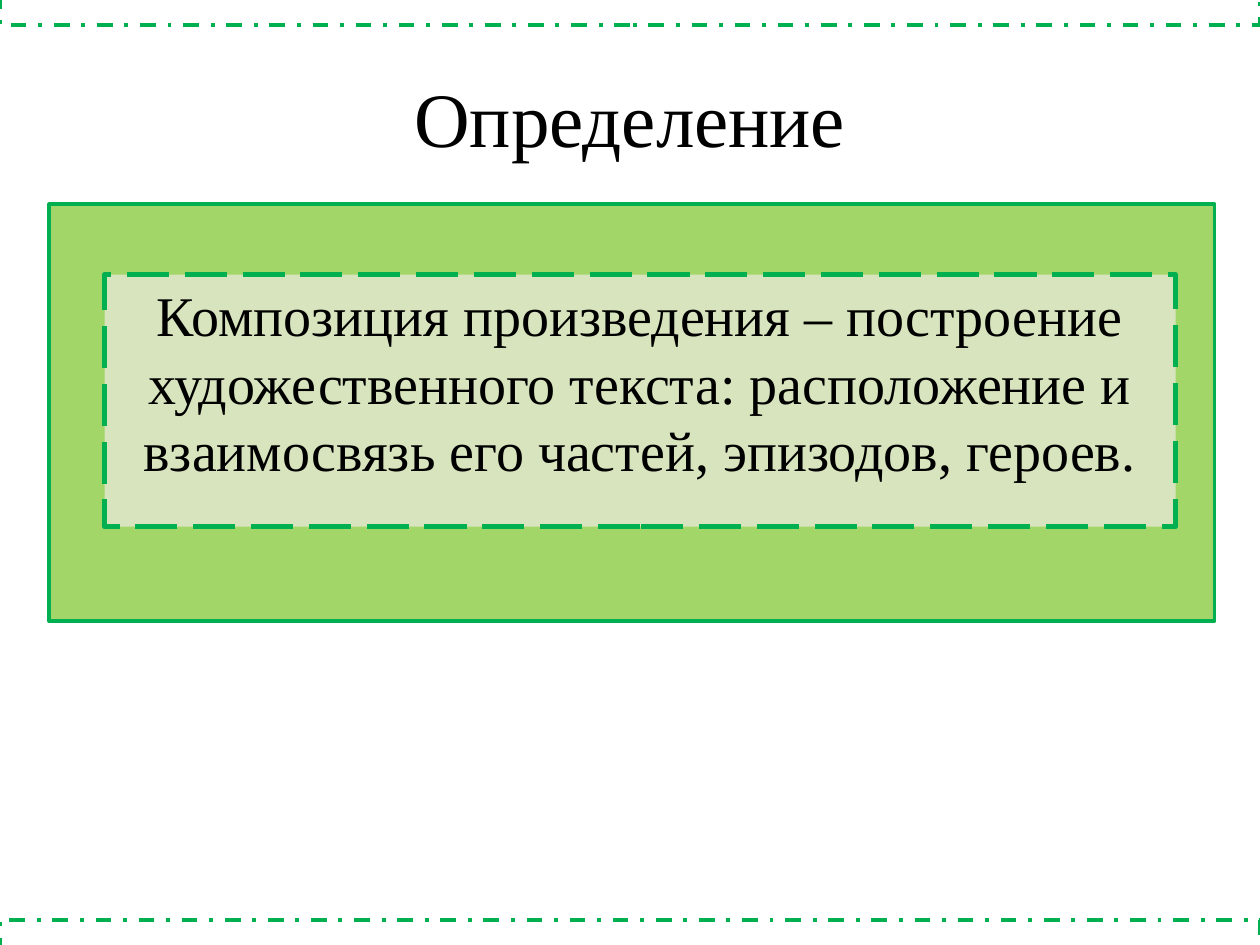
from lxml.etree import SubElement
from pptx import Presentation
from pptx.dml.color import RGBColor
from pptx.enum.dml import MSO_LINE
from pptx.enum.shapes import MSO_SHAPE
from pptx.enum.text import MSO_ANCHOR, MSO_AUTO_SIZE, PP_ALIGN
from pptx.oxml.ns import qn
from pptx.util import Inches, Pt

TITLE = "Определение"
DEFINITION = (
    "Композиция произведения – построение художественного текста: "
    "расположение и взаимосвязь его частей, эпизодов, героев."
)
FONT = "Times New Roman"
COLORS = {"text": "000000", "border": "00B050", "panel": "A2D668", "card": "D7E4BD"}
WIDTH, HEIGHT = 10, 7.5
BAND_HEIGHT = 0.4
BAND_TOPS = (HEIGHT - BAND_HEIGHT / 2, -BAND_HEIGHT / 2)
TITLE_AREA = (0.5, 0.3, 9, 1.25)
PANEL_AREA = (0.39, 1.62, 9.25, 3.31)
CARD_AREA = (0.83, 2.18, 8.5, 2)


def color(name):
    return RGBColor.from_string(COLORS[name])


def place(shape, area):
    shape.left, shape.top, shape.width, shape.height = map(Inches, area)


def paint(shape, fill, width, dash=None):
    if fill:
        shape.fill.solid()
        shape.fill.fore_color.rgb = color(fill)
    else:
        shape.fill.background()
    shape.line.color.rgb = color("border")
    shape.line.width = Pt(width)
    if dash:
        shape.line.dash_style = dash


def add_rectangle(slide, area, fill, width, dash=None):
    shape = slide.shapes.add_shape(MSO_SHAPE.RECTANGLE, *map(Inches, area))
    shape.shadow.inherit = False
    paint(shape, fill, width, dash)
    return shape


def write(shape, text, size, anchor):
    frame = shape.text_frame
    frame.text = text
    frame.word_wrap = True
    frame.auto_size = MSO_AUTO_SIZE.NONE
    frame.vertical_anchor = anchor
    paragraph = frame.paragraphs[0]
    paragraph.alignment = PP_ALIGN.CENTER
    font = paragraph.runs[0].font
    font.name, font.size = FONT, Pt(size)
    font.color.rgb = color("text")
    return paragraph


def main():
    """Build the definition slide and save it."""
    deck = Presentation()
    deck.slide_width, deck.slide_height = Inches(WIDTH), Inches(HEIGHT)
    slide = deck.slides.add_slide(deck.slide_layouts[1])
    title, card = slide.placeholders

    panel = add_rectangle(slide, PANEL_AREA, "panel", 2)
    title.element.addprevious(panel.element)

    place(title, TITLE_AREA)
    write(title, TITLE, 44, MSO_ANCHOR.MIDDLE)

    place(card, CARD_AREA)
    paint(card, "card", 3, MSO_LINE.LONG_DASH)
    paragraph = write(card, DEFINITION, 32, MSO_ANCHOR.TOP)
    properties = paragraph._p.get_or_add_pPr()
    properties.set("marL", "0")
    properties.set("indent", "0")
    SubElement(properties, qn("a:buNone"))

    for top in BAND_TOPS:
        add_rectangle(slide, (0, top, WIDTH, BAND_HEIGHT), None, 2.25, MSO_LINE.DASH_DOT)

    deck.save("out.pptx")


if __name__ == "__main__":
    main()
